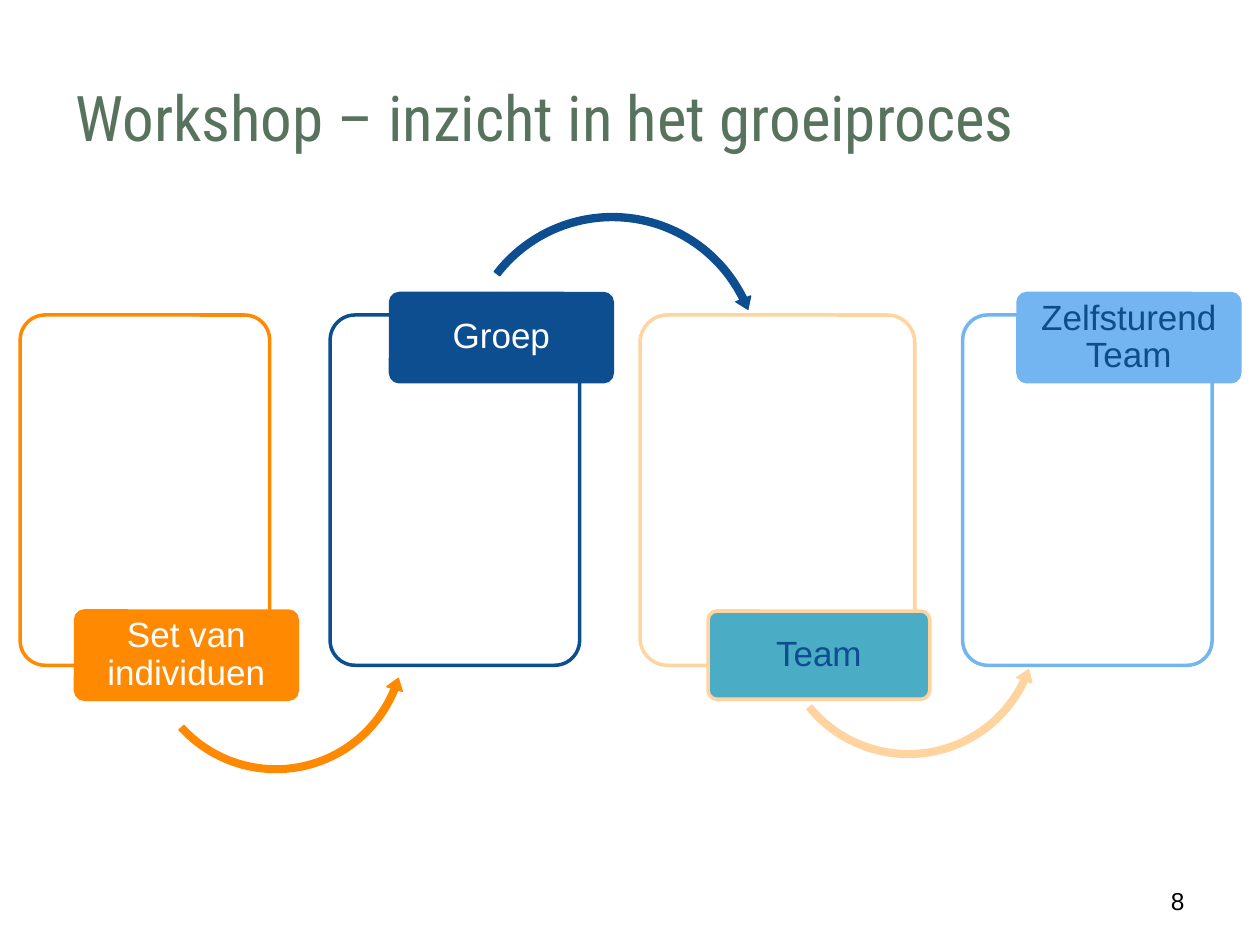
"""Build the slide on the four stages of team growth."""
from lxml import etree
from pptx import Presentation
from pptx.dml.color import RGBColor
from pptx.enum import shapes as kinds, text as txt
from pptx.oxml.ns import qn
from pptx.util import Inches, Pt

GREEN = RGBColor(0x58, 0x73, 0x5D)
ORANGE = RGBColor(0xFF, 0x89, 0x00)
NAVY = RGBColor(0x0D, 0x4E, 0x91)
DEEP_NAVY = RGBColor(0x0D, 0x4E, 0x87)
PEACH = RGBColor(0xFF, 0xD4, 0x9F)
SKY = RGBColor(0x73, 0xB5, 0xF1)
TEAL = RGBColor(0x4B, 0xAC, 0xC6)
WHITE = RGBColor(0xFF, 0xFF, 0xFF)
BLACK = RGBColor(0x00, 0x00, 0x00)

KIND = kinds.MSO_SHAPE
PANEL_TOP, PANEL_HEIGHT = 2.5, 2.78
LABEL_WIDTH, LABEL_HEIGHT = 1.76, 0.7
LABEL_HIGH, LABEL_LOW = 2.33, 4.85
UNDER_ARC = (0.025, 3.091, 11.242, 80.641, 0.03)
OVER_ARC = (0.023, 2.716, 202.123, 132.349, 0.026)


def add_figure(kind, box, adjustments, fill, line, width):
    figure = slide.shapes.add_shape(kind, *map(Inches, box))
    for index, value in enumerate(adjustments):
        figure.adjustments[index] = value
    figure.shadow.inherit = False
    figure.fill.solid()
    figure.fill.fore_color.rgb = fill
    figure.line.color.rgb = line
    figure.line.width = Pt(width)
    return figure


def add_run(paragraph, words, font_name, size, color):
    run = paragraph.add_run()
    run.text = words
    run.font.name = font_name
    run.font.size = Pt(size)
    run.font.color.rgb = color


prs = Presentation()
prs.slide_width, prs.slide_height = Inches(10), Inches(7.5)
slide = prs.slides.add_slide(prs.slide_layouts[5])

title = slide.shapes.title
title.left, title.top, title.width, title.height = map(Inches, (0.5, 0.3, 9, 1.25))
title.text_frame.vertical_anchor = txt.MSO_ANCHOR.MIDDLE
heading = title.text_frame.paragraphs[0]
heading.alignment = txt.PP_ALIGN.LEFT
add_run(heading, "Workshop – inzicht in het groeiproces", "Roboto Condensed", 36, GREEN)

number_box = slide.shapes.add_textbox(*map(Inches, (7.17, 6.95, 2.33, 0.4)))
number_box.text_frame.word_wrap = True
number_box.text_frame.vertical_anchor = txt.MSO_ANCHOR.MIDDLE
page_number = number_box.text_frame.paragraphs[0]
page_number.alignment = txt.PP_ALIGN.RIGHT
add_run(page_number, "8", "Arial", 14, BLACK)

under, over = KIND.LEFT_CIRCULAR_ARROW, KIND.CIRCULAR_ARROW
stages = [
    ("Set van individuen", 0.16, 1.98, 0.6, LABEL_LOW, ORANGE, ORANGE, WHITE,
     (under, (1.11, 4.01, 2.16, 2.16), UNDER_ARC, 3.2)),
    ("Groep", 2.62, 1.98, 3.1, LABEL_HIGH, NAVY, NAVY, WHITE,
     (over, (3.64, 1.66, 2.44, 2.44), OVER_ARC, 357.1)),
    ("Team", 5.08, 2.18, 5.62, LABEL_LOW, PEACH, TEAL, NAVY,
     (under, (6.13, 3.89, 2.16, 2.16), UNDER_ARC, 6.3)),
    ("Zelfsturend Team", 7.64, 1.98, 8.08, LABEL_HIGH, SKY, SKY, DEEP_NAVY, None),
]

for name, left, width, label_left, label_top, accent, label_fill, ink, arc in stages:
    panel = add_figure(KIND.ROUNDED_RECTANGLE, (left, PANEL_TOP, width, PANEL_HEIGHT),
                       (0.1,), WHITE, accent, 2)
    panel_color = panel.fill._xPr.find(qn("a:solidFill"))[0]
    etree.SubElement(panel_color, qn("a:alpha")).set("val", "90000")

    if arc:
        arc_kind, arc_box, arc_shape, angle = arc
        arrow = add_figure(arc_kind, arc_box, arc_shape, accent, accent, 0.75)
        arrow.rotation = angle

    label = add_figure(KIND.ROUNDED_RECTANGLE,
                       (label_left, label_top, LABEL_WIDTH, LABEL_HEIGHT),
                       (0.1,), label_fill, accent, 2)
    frame = label.text_frame
    frame.word_wrap = True
    frame.vertical_anchor = txt.MSO_ANCHOR.MIDDLE
    frame.margin_left = frame.margin_right = Inches(0.04)
    frame.margin_top = frame.margin_bottom = Inches(0.03)
    caption = frame.paragraphs[0]
    caption.alignment = txt.PP_ALIGN.CENTER
    caption.line_spacing = 0.9
    add_run(caption, name, "Arial", 20, ink)

prs.save("out.pptx")
